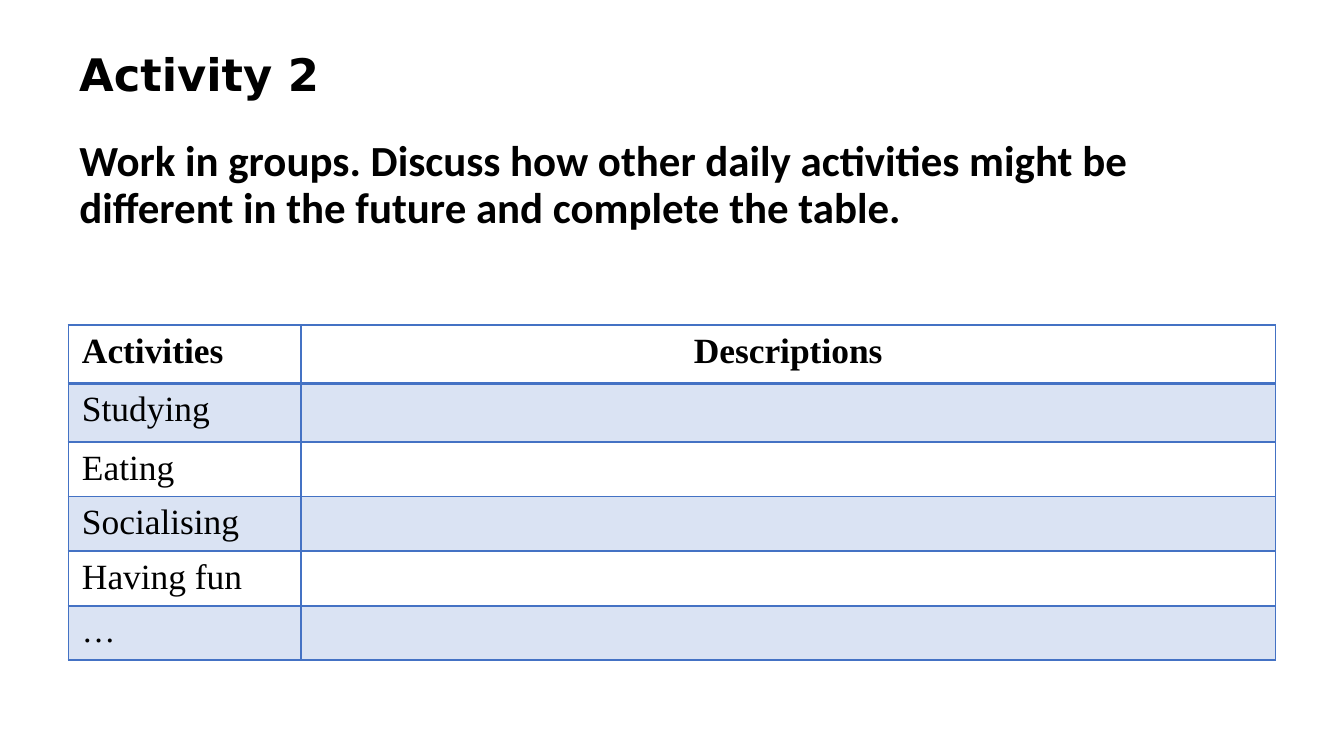
import pptx
import pptx.util
import pptx.dml.color
import pptx.enum.text
import pptx.oxml
import pptx.oxml.ns

WIDE = 10
HIGH = WIDE * 9 / 16
LEFT, SPAN = 0.51 / WIDE, 8.98 / WIDE
BLACK, BLUE, PALE = "000000", "4472C4", "DAE3F3"
SERIF = "Times New Roman"
ROWS = [
    ("Activities", "Descriptions"),
    ("Studying", ""),
    ("Eating", ""),
    ("Socialising", ""),
    ("Having fun", ""),
    ("…", ""),
]
TALL = [0.43, 0.43, 0.4, 0.39, 0.39, 0.4]
SHARES = [1.73 / 8.98, 7.25 / 8.98]


def paint(code):
    return pptx.dml.color.RGBColor.from_string(code)


def place(box):
    left, top, width, height = box
    return [pptx.util.Inches(n) for n in
            (left * WIDE, top * HIGH, width * WIDE, height * HIGH)]


def style(par, face, size, bold):
    par.font.name = face
    par.font.size = pptx.util.Pt(size)
    par.font.bold = bold
    par.font.color.rgb = paint(BLACK)


def add_text(slide, box, text, face, size, anchor):
    frame = slide.shapes.add_textbox(*place(box)).text_frame
    frame.word_wrap = True
    frame.vertical_anchor = anchor
    frame.margin_left = frame.margin_right = pptx.util.Inches(0.08)
    frame.margin_top = frame.margin_bottom = pptx.util.Inches(0.04)
    par = frame.paragraphs[0]
    par.text = text
    par.line_spacing = 0.9
    style(par, face, size, True)


def add_edge(cell, side, points):
    props = cell._tc.get_or_add_tcPr()
    edge = pptx.oxml.parse_xml(
        f'<a:{side} {pptx.oxml.ns.nsdecls("a")} w="{pptx.util.Pt(points)}">'
        f'<a:solidFill><a:srgbClr val="{BLUE}"/></a:solidFill></a:{side}>')
    props.append(edge)


def fill_cell(cell, text, row, col):
    for side in ("lnL", "lnR", "lnT", "lnB"):
        heavy = (row, side) in ((0, "lnB"), (1, "lnT"))
        add_edge(cell, side, 2 if heavy else 1)
    if row % 2:
        cell.fill.solid()
        cell.fill.fore_color.rgb = paint(PALE)
    else:
        cell.fill.background()
    cell.margin_top = pptx.util.Inches(0.05)
    cell.margin_bottom = pptx.util.Inches(0.04)
    par = cell.text_frame.paragraphs[0]
    par.text = text
    if row == 0 and col == 1:
        par.alignment = pptx.enum.text.PP_ALIGN.CENTER
    style(par, SERIF, 18 if row == len(ROWS) - 1 else 19, row == 0)


def add_grid(slide, box):
    spot = place(box)
    table = slide.shapes.add_table(len(ROWS), len(SHARES), *spot).table
    table.horz_banding = False
    for col, share in zip(table.columns, SHARES):
        col.width = int(spot[2] * share)
    for line, tall in zip(table.rows, TALL):
        line.height = int(spot[3] * tall / sum(TALL))
    for row, texts in enumerate(ROWS):
        for col, text in enumerate(texts):
            fill_cell(table.cell(row, col), text, row, col)


def main():
    deck = pptx.Presentation()
    deck.slide_width = pptx.util.Inches(WIDE)
    deck.slide_height = pptx.util.Inches(HIGH)
    slide = deck.slides.add_slide(deck.slide_layouts[6])
    anchor = pptx.enum.text.MSO_ANCHOR
    add_text(slide, (LEFT, -0.05 / HIGH, 0.69, 1.25 / HIGH), "Activity 2",
             "DejaVu Sans", 24, anchor.MIDDLE)
    add_text(slide, (LEFT, 1 / HIGH, SPAN, 0.92 / HIGH),
             "Work in groups. Discuss how other daily activities might be "
             "different in the future and complete the table.",
             "Calibri", 23, anchor.TOP)
    add_grid(slide, (LEFT, 2.42 / HIGH, SPAN, 2.46 / HIGH))
    deck.save("out.pptx")


if __name__ == "__main__":
    main()
